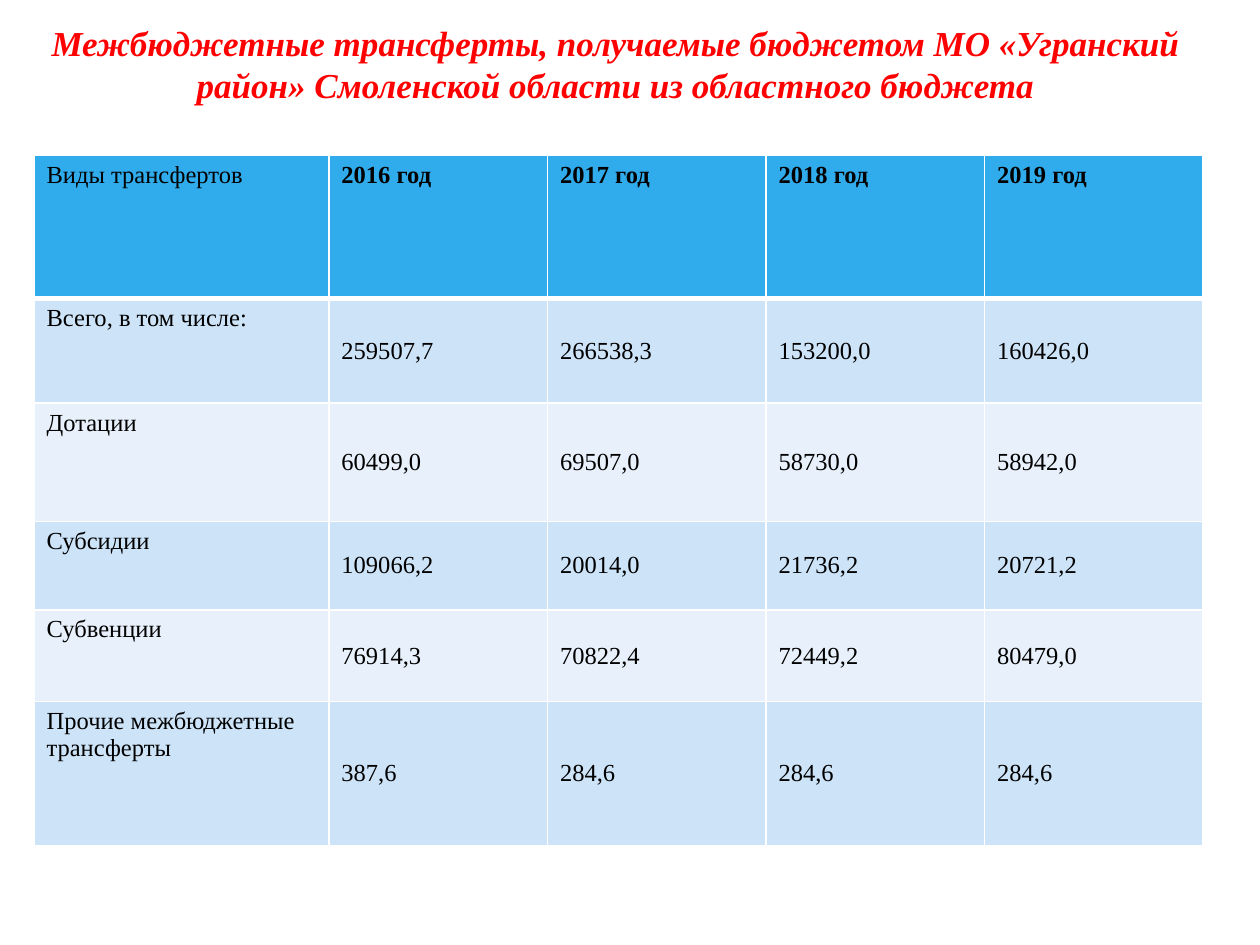
import dataclasses

import pptx
import pptx.dml.color
import pptx.enum.text
import pptx.oxml
import pptx.oxml.ns
import pptx.util
from pptx.util import Inches


@dataclasses.dataclass(frozen=True)
class Theme:
    font: str = "Times New Roman"
    title_size: int = 20
    table_size: int = 14
    title: str = "FF0000"
    text: str = "000000"
    header: str = "30ACEC"
    bands: tuple = ("CDE3F8", "E8F1FB")
    border: str = "FFFFFF"


THEME = Theme()
ANCHOR = pptx.enum.text.MSO_ANCHOR

TITLE = ("Межбюджетные трансферты, получаемые бюджетом МО «Угранский район» "
         "Смоленской области из областного бюджета")
TRANSFERS = [
    ("Виды трансфертов", "2016 год", "2017 год", "2018 год", "2019 год"),
    ("Всего, в том числе:", "259507,7", "266538,3", "153200,0", "160426,0"),
    ("Дотации", "60499,0", "69507,0", "58730,0", "58942,0"),
    ("Субсидии", "109066,2", "20014,0", "21736,2", "20721,2"),
    ("Субвенции", "76914,3", "70822,4", "72449,2", "80479,0"),
    ("Прочие межбюджетные трансферты", "387,6", "284,6", "284,6", "284,6"),
]
ROW_HEIGHTS = (1.14, 0.83, 0.94, 0.7, 0.73, 1.14)
KIND_WIDTH = 2.34


def rgb(code):
    return pptx.dml.color.RGBColor.from_string(code)


def style_font(font, size, color, bold=False, italic=False):
    font.name = THEME.font
    font.size = pptx.util.Pt(size)
    font.color.rgb = rgb(color)
    font.bold = bold
    font.italic = italic


def set_borders(cell, widths):
    """Draw cell edges; widths maps L, R, T, B to points."""
    properties = cell._tc.get_or_add_tcPr()
    for position, (side, points) in enumerate(widths.items()):
        properties.insert(position, pptx.oxml.parse_xml(
            f'<a:ln{side} {pptx.oxml.ns.nsdecls("a")} w="{pptx.util.Pt(points)}">'
            f'<a:solidFill><a:srgbClr val="{THEME.border}"/></a:solidFill></a:ln{side}>'))


def add_title(slide, left, top, width, height):
    box = slide.shapes.add_textbox(Inches(left), Inches(top), Inches(width), Inches(height))
    frame = box.text_frame
    frame.word_wrap = True
    frame.vertical_anchor = ANCHOR.MIDDLE
    frame.text = TITLE
    heading = frame.paragraphs[0]
    heading.alignment = pptx.enum.text.PP_ALIGN.CENTER
    style_font(heading.runs[0].font, THEME.title_size, THEME.title, bold=True, italic=True)


def add_transfers(slide, left, top, width, height):
    years = len(TRANSFERS[0]) - 1
    table = slide.shapes.add_table(len(TRANSFERS), years + 1, Inches(left), Inches(top),
                                   Inches(width), Inches(height)).table

    # The kinds column is wider; the years share the rest equally
    table.columns[0].width = Inches(KIND_WIDTH)
    for column in range(1, years + 1):
        table.columns[column].width = Inches((width - KIND_WIDTH) / years)

    for row, record in enumerate(TRANSFERS):
        table.rows[row].height = Inches(ROW_HEIGHTS[row])
        is_header = row == 0
        fill = THEME.header if is_header else THEME.bands[(row - 1) % 2]
        edges = {"L": 1, "R": 1, "T": 3 if row == 1 else 1, "B": 3 if is_header else 1}
        for column, value in enumerate(record):
            cell = table.cell(row, column)
            is_year = column > 0
            cell.text = value
            cell.vertical_anchor = ANCHOR.MIDDLE if is_year and not is_header else ANCHOR.TOP
            style_font(cell.text_frame.paragraphs[0].runs[0].font, THEME.table_size,
                       THEME.text, bold=is_header and is_year)
            cell.fill.solid()
            cell.fill.fore_color.rgb = rgb(fill)
            set_borders(cell, edges)


def main():
    deck = pptx.Presentation()
    deck.slide_width, deck.slide_height = Inches(10), Inches(7.5)
    slide = deck.slides.add_slide(deck.slide_layouts[6])
    add_title(slide, 0.27, 0.14, 9.23, 0.73)
    add_transfers(slide, 0.27, 1.23, 9.28, sum(ROW_HEIGHTS))
    deck.save("out.pptx")


if __name__ == "__main__":
    main()
